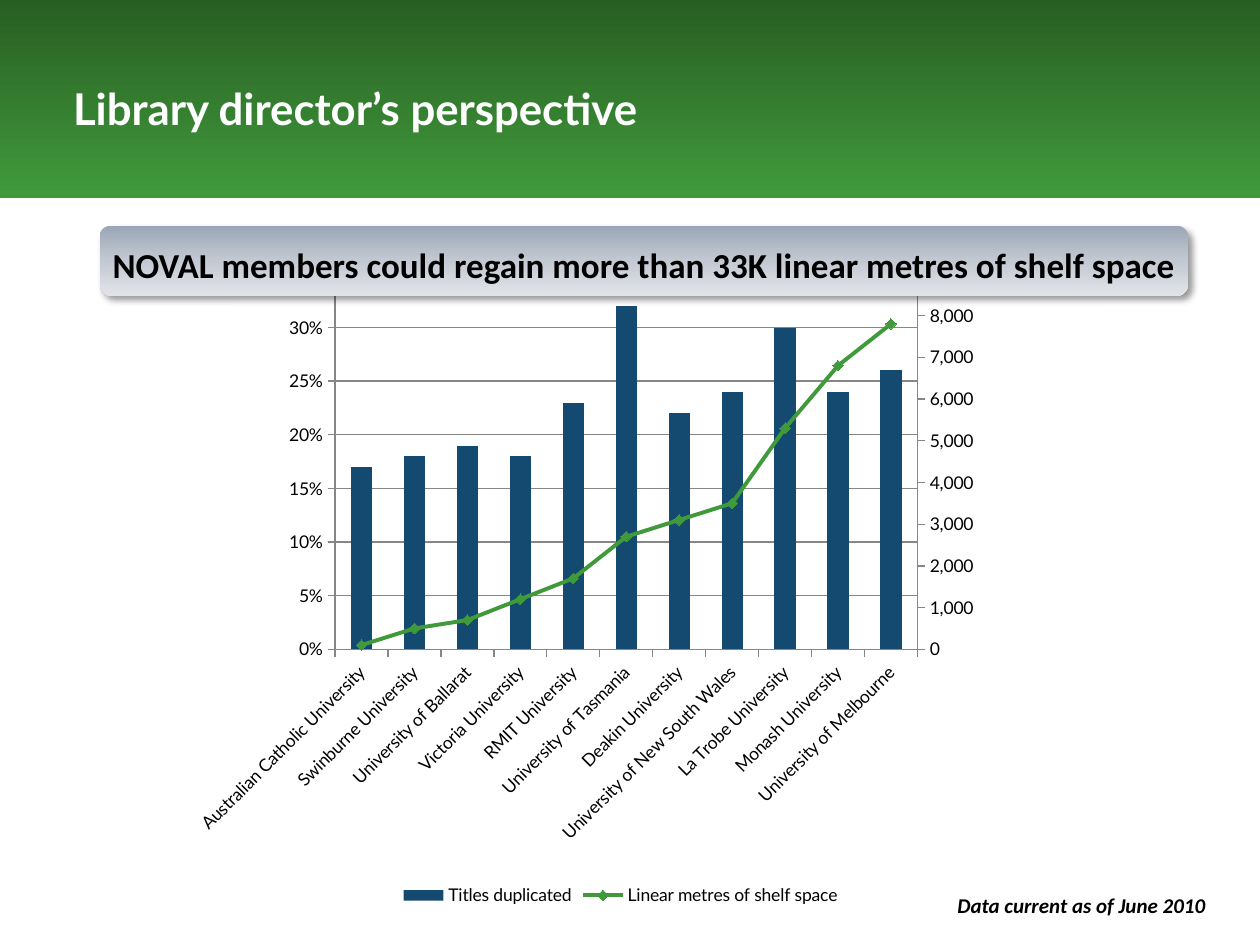
from lxml import etree
from pptx import Presentation
from pptx import util as u
from pptx.chart.data import CategoryChartData
from pptx.dml.color import RGBColor
from pptx.enum import chart as ch, shapes, text
from pptx.oxml import parse_xml
from pptx.oxml.ns import nsdecls, qn

# Content
TITLE = "Library director’s perspective"
CALLOUT = "NOVAL members could regain more than 33K linear metres of shelf space"
NOTE = "Data current as of June 2010"
BAR_NAME, LINE_NAME = "Titles duplicated", "Linear metres of shelf space"
LIBRARIES = [  # name, share duplicated, metres
    ("Australian Catholic University", 0.17, 100),
    ("Swinburne University", 0.18, 500),
    ("University of Ballarat", 0.19, 700),
    ("Victoria University", 0.18, 1200),
    ("RMIT University", 0.23, 1700),
    ("University of Tasmania", 0.32, 2700),
    ("Deakin University", 0.22, 3100),
    ("University of New South Wales", 0.24, 3500),
    ("La Trobe University", 0.3, 5300),
    ("Monash University", 0.24, 6800),
    ("University of Melbourne", 0.26, 7800),
]
THEME = {
    "head": "Lato", "body": "Calibri",
    "title_size": 25, "callout_size": 20, "note_size": 12, "chart_size": 10,
    "white": "FFFFFF", "black": "000000", "grid": "868686",
    "bar": "144A6F", "line": "409A3C",
    "band": [(0, "285E22"), (100, "409A3C")],
    "panel": [(0, "9AA6B7"), (50, "C3C9D2"), (100, "E2E4E9")],
}
PLOT = {"x": 0.226, "y": 0.055, "w": 0.559, "h": 0.557}


def rgb(key):
    return RGBColor.from_string(THEME[key])


def box(*inches):
    return [u.Inches(n) for n in inches]


def shadow_xml(blur, dist, alpha):
    return parse_xml(
        f'<a:effectLst {nsdecls("a")}><a:outerShdw blurRad="{u.Pt(blur)}" dist="{u.Pt(dist)}" '
        f'dir="2700000" algn="tl" rotWithShape="0"><a:srgbClr val="{THEME["black"]}">'
        f'<a:alpha val="{alpha * 1000}"/></a:srgbClr></a:outerShdw></a:effectLst>')


def gradient_shape(slide, kind, area, stops):
    """Shape with no outline and a top-to-bottom gradient."""
    sp = slide.shapes.add_shape(kind, *box(*area))
    sp.shadow.inherit = False
    sp.line.fill.background()
    sp.fill.gradient()
    sp.fill.gradient_angle = 270
    stop_list = sp._element.spPr.find(".//" + qn("a:gsLst"))
    for old in list(stop_list):
        stop_list.remove(old)
    for pos, color in stops:
        stop_list.append(parse_xml(
            f'<a:gs {nsdecls("a")} pos="{pos * 1000}"><a:srgbClr val="{color}"/></a:gs>'))
    return sp


def write(sp, words, font, size, color, align, italic=False, spacing=None, wrap=False):
    tf = sp.text_frame
    tf.word_wrap = wrap
    tf.vertical_anchor = text.MSO_ANCHOR.MIDDLE
    p = tf.paragraphs[0]
    p.alignment = align
    if spacing:
        p.line_spacing = spacing
    r = p.add_run()
    r.text = words
    f = r.font
    f.name, f.size, f.bold, f.italic = THEME[font], u.Pt(THEME[size]), True, italic
    f.color.rgb = rgb(color)
    return r


def style_axis(axis, number_format=None, top=None, step=None):
    axis.format.line.color.rgb = rgb("grid")
    axis.major_tick_mark = ch.XL_TICK_MARK.OUTSIDE
    if number_format:
        axis.minimum_scale, axis.maximum_scale, axis.major_unit = 0, top, step
        axis.tick_labels.number_format = number_format
        axis.tick_labels.number_format_is_linked = False


def move_to_second_axis(chart):
    """Turn the last series into a marked line on a right-hand axis."""
    bars = chart._chartSpace.find(".//" + qn("c:barChart"))
    ser = bars.findall(qn("c:ser"))[-1]
    for bar_only in ser.findall(qn("c:invertIfNegative")):
        ser.remove(bar_only)
    line = parse_xml(
        f'<c:lineChart {nsdecls("c")}><c:grouping val="standard"/><c:varyColors val="0"/>'
        '<c:marker val="1"/><c:axId val="5001"/><c:axId val="5002"/></c:lineChart>')
    line.insert(2, ser)
    bars.addnext(line)
    color = THEME["grid"]
    axes = parse_xml(
        f'<c:plotArea {nsdecls("c", "a")}>'
        '<c:catAx><c:axId val="5001"/><c:scaling><c:orientation val="minMax"/></c:scaling>'
        '<c:delete val="1"/><c:axPos val="b"/><c:crossAx val="5002"/>'
        '<c:crosses val="autoZero"/></c:catAx>'
        '<c:valAx><c:axId val="5002"/><c:scaling><c:orientation val="minMax"/>'
        '<c:max val="9000"/><c:min val="0"/></c:scaling><c:delete val="0"/><c:axPos val="r"/>'
        '<c:numFmt formatCode="#,##0" sourceLinked="0"/><c:majorTickMark val="out"/>'
        '<c:minorTickMark val="none"/><c:tickLblPos val="nextTo"/>'
        f'<c:spPr><a:ln><a:solidFill><a:srgbClr val="{color}"/></a:solidFill></a:ln></c:spPr>'
        '<c:crossAx val="5001"/><c:crosses val="max"/><c:majorUnit val="1000"/></c:valAx>'
        '</c:plotArea>')
    last_axis = chart.value_axis._element
    for axis in reversed(list(axes)):
        last_axis.addnext(axis)


def set_plot_layout(chart):
    area = chart._chartSpace.find(".//" + qn("c:plotArea"))
    for old in area.findall(qn("c:layout")):
        area.remove(old)
    layout = parse_xml(
        f'<c:layout {nsdecls("c")}><c:manualLayout><c:layoutTarget val="inner"/>'
        '<c:xMode val="edge"/><c:yMode val="edge"/></c:manualLayout></c:layout>')
    for side, share in PLOT.items():
        etree.SubElement(layout[0], qn(f"c:{side}")).set("val", str(share))
    area.insert(0, layout)


def add_library_chart(slide):
    names, shares, metres = zip(*LIBRARIES)
    data = CategoryChartData()
    data.categories = names
    data.add_series(BAR_NAME, shares, "0%")
    data.add_series(LINE_NAME, metres, "#,##0")
    chart = slide.shapes.add_chart(
        ch.XL_CHART_TYPE.COLUMN_CLUSTERED, *box(0.79, 1.88, 8.27, 5.35), data).chart
    chart.has_title = False
    chart.font.name, chart.font.size = THEME["head"], u.Pt(THEME["chart_size"])
    chart.font.color.rgb = rgb("black")
    chart.has_legend = True
    chart.legend.position = ch.XL_LEGEND_POSITION.BOTTOM
    chart.legend.include_in_layout = False

    style_axis(chart.category_axis)
    chart.category_axis.tick_labels.font.size = u.Pt(THEME["chart_size"])
    chart.category_axis._element.find(".//" + qn("a:bodyPr")).set("rot", "-2700000")
    style_axis(chart.value_axis, "0%", 0.35, 0.05)
    chart.value_axis.major_gridlines.format.line.color.rgb = rgb("grid")

    plot = chart.plots[0]
    plot.gap_width = 150
    plot.vary_by_categories = False
    fill = plot.series[0].format.fill
    fill.solid()
    fill.fore_color.rgb = rgb("bar")

    move_to_second_axis(chart)
    set_plot_layout(chart)
    metres_line = chart.plots[1].series[0]
    metres_line.smooth = False
    metres_line.format.line.width = u.Pt(2.25)
    metres_line.format.line.color.rgb = rgb("line")
    marker = metres_line.marker
    marker.style, marker.size = ch.XL_MARKER_STYLE.DIAMOND, 6
    marker.format.fill.solid()
    marker.format.fill.fore_color.rgb = rgb("line")
    marker.format.line.color.rgb = rgb("line")


def main():
    prs = Presentation()
    prs.slide_width, prs.slide_height = box(10, 7.5)
    s = prs.slides.add_slide(prs.slide_layouts[5])

    # Header band, placed behind the title
    band = gradient_shape(s, shapes.MSO_SHAPE.RECTANGLE, (0, 0, 10, 1.57), THEME["band"])
    title = s.shapes.title
    title._element.addprevious(band._element)
    title.left, title.top, title.width, title.height = box(0.48, 0.16, 7.64, 1.4)
    r = write(title, TITLE, "head", "title_size", "white", text.PP_ALIGN.LEFT, wrap=True)
    r.font._element.find(qn("a:solidFill")).addnext(shadow_xml(0, 3, 100))

    # Chart
    add_library_chart(s)

    # Date note
    note = s.shapes.add_textbox(*box(7.5, 7, 2.2, 0.33))
    write(note, NOTE, "body", "note_size", "black", text.PP_ALIGN.LEFT, True, 1.2)

    # Callout over the top of the chart
    panel = gradient_shape(s, shapes.MSO_SHAPE.ROUNDED_RECTANGLE,
                           (0.79, 1.79, 8.64, 0.56), THEME["panel"])
    sp_pr = panel._element.spPr
    sp_pr.replace(sp_pr.find(qn("a:effectLst")), shadow_xml(4, 3, 40))
    write(panel, CALLOUT, "body", "callout_size", "black", text.PP_ALIGN.CENTER, spacing=1.2)

    prs.save("out.pptx")


if __name__ == "__main__":
    main()
